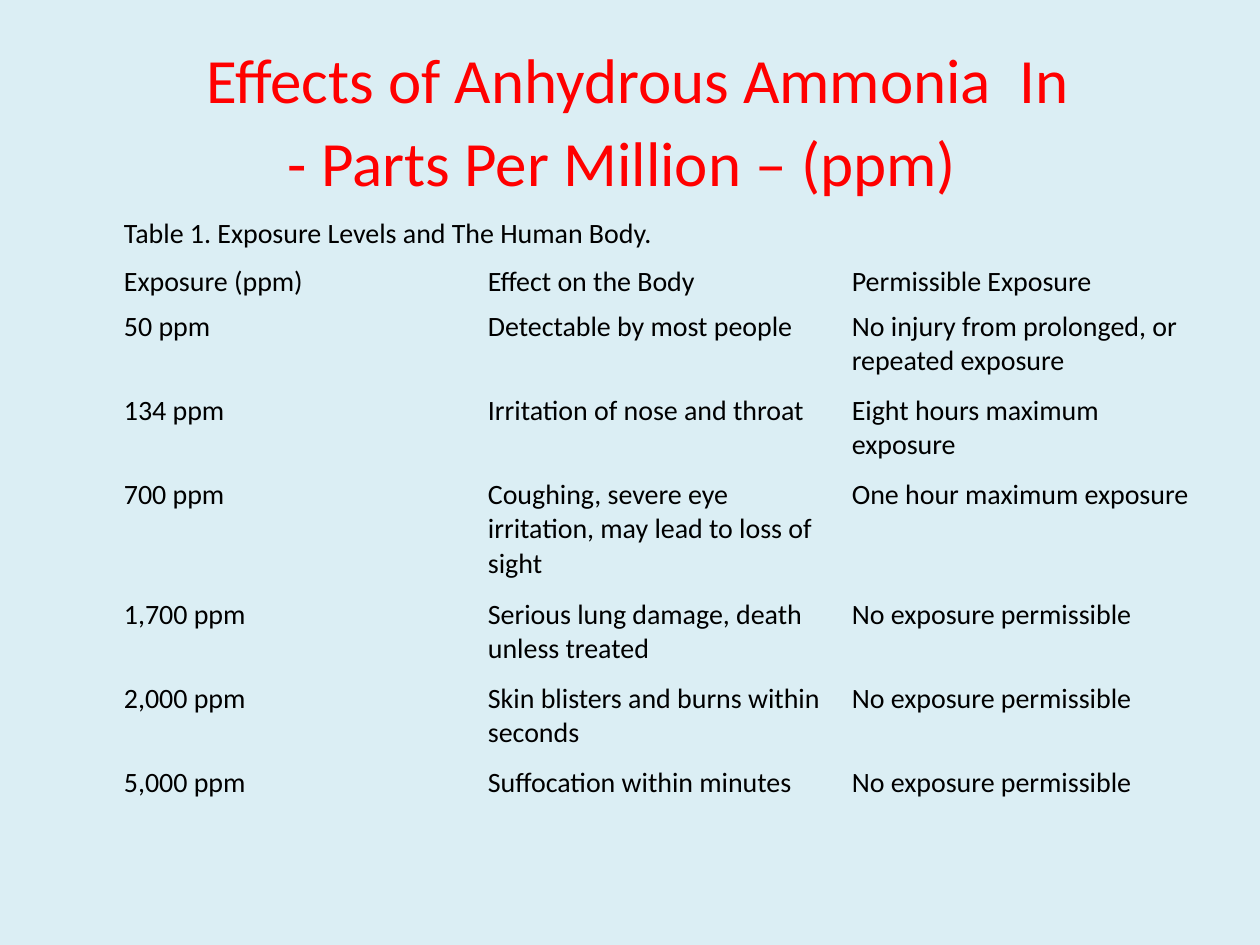
"""Build a slide with a table of anhydrous ammonia exposure levels."""
import pptx
import pptx.dml.color
import pptx.enum.text
import pptx.oxml.ns
import pptx.util

TITLE_LINES = [
    [(" ", "spacer"), ("Effects of Anhydrous Ammonia  In", "title")],
    [("- Parts Per Million – (ppm)", "title"), (" ", "spacer")],
]
CAPTION = "Table 1. Exposure Levels and The Human Body."
HEADERS = ("Exposure (ppm)", "Effect on the Body", "Permissible Exposure")
LEVELS = [
    (2, "50 ppm", "Detectable by most people", "No injury from prolonged, or repeated exposure"),
    (2, "134 ppm", "Irritation of nose and throat", "Eight hours maximum exposure"),
    (3, "700 ppm", "Coughing, severe eye irritation, may lead to loss of sight", "One hour maximum exposure"),
    (2, "1,700 ppm", "Serious lung damage, death unless treated", "No exposure permissible"),
    (2, "2,000 ppm", "Skin blisters and burns within seconds", "No exposure permissible"),
    (1, "5,000 ppm", "Suffocation within minutes", "No exposure permissible"),
]
THEME = {
    "font": "Calibri",
    "background": "DBEEF4",
    "title": (36, "FF0000"),
    "spacer": (39.6, "006600"),
    "body": (16, "000000"),
}
PLAIN_TABLE_STYLE = "{2D5ABB26-0587-4C30-8999-92F81FD0307C}"
SCALE = 914400 // 126
SLIDE_SIZE = (1260, 945)
TITLE_BOX = (63, 38, 1134, 158)
TABLE_LEFT, TABLE_TOP, COLUMN_WIDTH = 116, 210, 364
ROW_BASE, LINE_HEIGHT = 12, 36
CELL_INSET_X, CELL_INSET_Y = 8, 4
ANCHOR = pptx.enum.text.MSO_ANCHOR


def px(length):
    return pptx.util.Emu(length * SCALE)


def color(name):
    return pptx.dml.color.RGBColor.from_string(name)


def add_span(para, text, role):
    size, shade = THEME[role]
    span = para.add_run()
    span.text = text
    span.font.name = THEME["font"]
    span.font.size = pptx.util.Pt(size)
    span.font.color.rgb = color(shade)


def add_title(page):
    box = page.shapes.add_textbox(*map(px, TITLE_BOX))
    frame = box.text_frame
    frame.word_wrap = True
    frame.vertical_anchor = ANCHOR.MIDDLE
    para = frame.paragraphs[0]
    para.alignment = pptx.enum.text.PP_ALIGN.CENTER
    for number, line in enumerate(TITLE_LINES):
        if number:
            para.add_line_break()
        for text, role in line:
            add_span(para, text, role)


def fill_cell(cell, text, anchor):
    cell.fill.background()
    cell.margin_left = cell.margin_right = px(CELL_INSET_X)
    cell.margin_top = cell.margin_bottom = px(CELL_INSET_Y)
    cell.vertical_anchor = anchor
    add_span(cell.text_frame.paragraphs[0], text, "body")


def add_exposure_table(page):
    rows = [(1, CAPTION), (1, *HEADERS), *LEVELS]
    heights = [ROW_BASE + LINE_HEIGHT * lines for lines, *_ in rows]
    columns = len(HEADERS)
    frame = page.shapes.add_table(
        len(rows), columns, px(TABLE_LEFT), px(TABLE_TOP),
        px(COLUMN_WIDTH * columns), px(sum(heights)))
    table = frame.table
    table.first_row = table.horz_banding = False
    style = frame._element.find(".//" + pptx.oxml.ns.qn("a:tableStyleId"))
    style.text = PLAIN_TABLE_STYLE
    for column in table.columns:
        column.width = px(COLUMN_WIDTH)
    table.cell(0, 0).merge(table.cell(0, columns - 1))
    for row, (_, *texts) in enumerate(rows):
        table.rows[row].height = px(heights[row])
        anchor = ANCHOR.MIDDLE if row < 2 else ANCHOR.TOP
        for column, text in enumerate(texts):
            fill_cell(table.cell(row, column), text, anchor)


def main():
    deck = pptx.Presentation()
    deck.slide_width, deck.slide_height = map(px, SLIDE_SIZE)
    page = deck.slides.add_slide(deck.slide_layouts[6])
    page.background.fill.solid()
    page.background.fill.fore_color.rgb = color(THEME["background"])
    add_title(page)
    add_exposure_table(page)
    deck.save("out.pptx")


if __name__ == "__main__":
    main()
